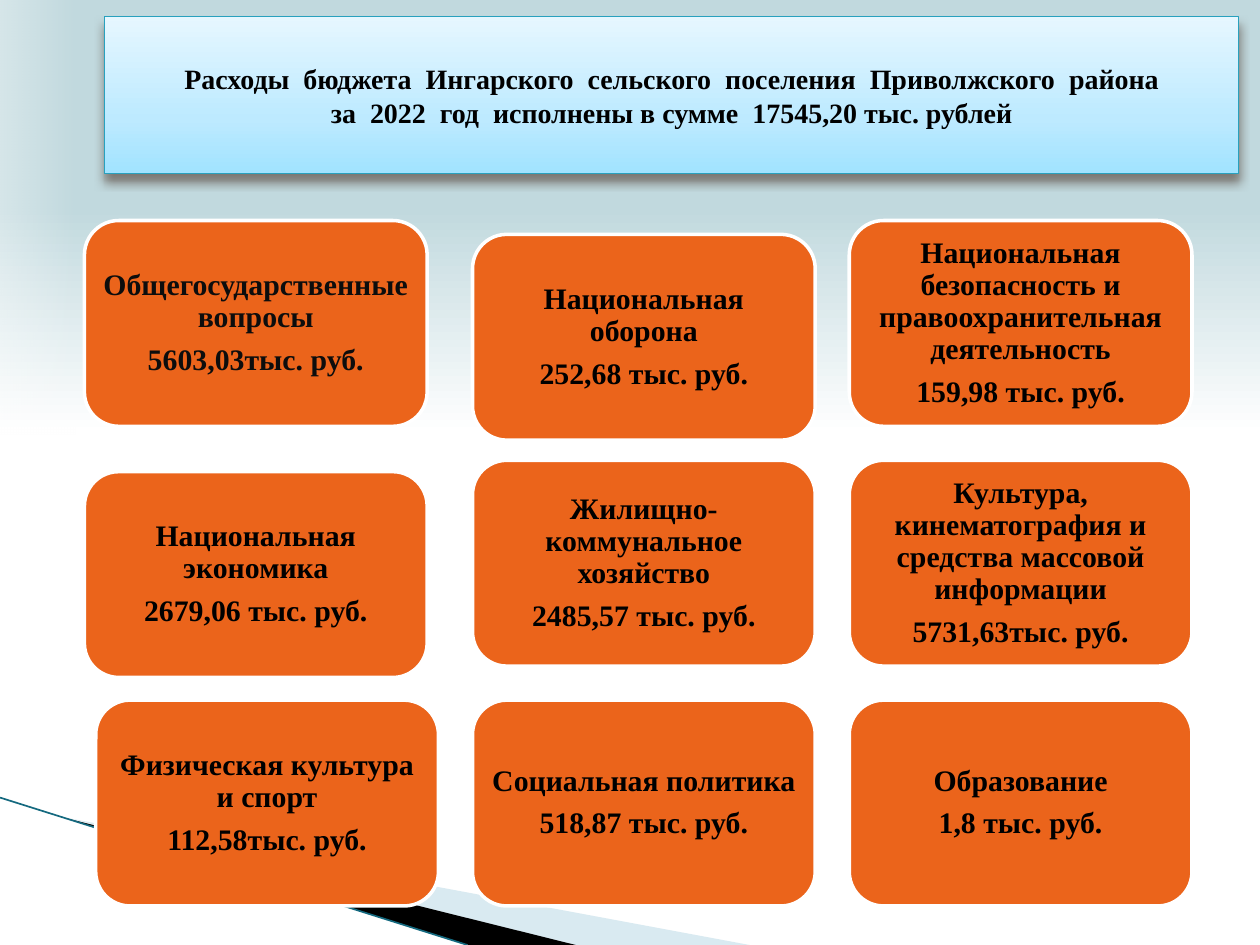
from dataclasses import dataclass

from lxml import etree
from pptx import Presentation
from pptx.dml.color import RGBColor
from pptx.enum.shapes import MSO_CONNECTOR, MSO_SHAPE
from pptx.enum.text import MSO_ANCHOR, PP_ALIGN
from pptx.oxml.ns import qn
from pptx.util import Inches, Pt

RECT = MSO_SHAPE.RECTANGLE
ALT = MSO_SHAPE.FLOWCHART_ALTERNATE_PROCESS
ROUND = MSO_SHAPE.ROUNDED_RECTANGLE
STRAIGHT = MSO_CONNECTOR.STRAIGHT
MIDDLE = MSO_ANCHOR.MIDDLE
CENTER = PP_ALIGN.CENTER


@dataclass(frozen=True)
class Theme:
    font: str = "Times New Roman"
    head: int = 16
    body: int = 17
    ink: str = "000000"
    soft: str = "0D0D0D"
    card: str = "EB641B"
    white: str = "FFFFFF"
    edge: str = "28A1BE"
    shade: str = "4E3B30"
    pale: str = "A0CBDC"
    teal: str = "14697F"
    sky: tuple = ((0, "C1D9DE"), (22, "C1D9DE"), (46, "FFFFFF"), (100, "FFFFFF"))
    glow: tuple = ((0, "FFFFFF", 35), (100, "FFFFFF", 0))
    ice: tuple = ((0, "E6F7FF"), (65, "BDEAFF"), (100, "A1E3FF"))


T = Theme()
WIDE, HIGH = 10, 7.5

# Words parted by "|" stand a double space apart.
TITLE = (
    "Расходы|бюджета|Ингарского|сельского|поселения|Приволжского|района",
    "за|2022|год|исполнены в сумме|17545,20 тыс. рублей",
)

# Name, sum, shift right, shift down, outline, text colour
CARDS = (
    ("Общегосударственные вопросы", "5603,03тыс. руб.", -0.09, 0, ALT, T.soft),
    ("Национальная оборона", "252,68 тыс. руб.", 0, 0.11, ALT, T.ink),
    ("Национальная безопасность и правоохранительная деятельность",
     "159,98 тыс. руб.", 0, 0, ALT, T.ink),
    ("Национальная экономика", "2679,06 тыс. руб.", -0.09, 0.09, ALT, T.ink),
    ("Жилищно-коммунальное хозяйство", "2485,57 тыс. руб.", 0, 0, ALT, T.ink),
    ("Культура, кинематография и средства массовой информации",
     "5731,63тыс. руб.", 0, 0, ALT, T.ink),
    ("Физическая культура и спорт", "112,58тыс. руб.", 0, 0, ROUND, T.ink),
    ("Социальная политика", "518,87 тыс. руб.", 0, 0, ALT, T.ink),
    ("Образование", "1,8 тыс. руб.", 0, 0, ALT, T.ink),
)


def rgb(code):
    return RGBColor.from_string(code)


def tint(parent, code, alpha=100):
    """Add a colour with an opacity in percent."""
    color = etree.SubElement(parent, qn("a:srgbClr"), val=code)
    if alpha < 100:
        etree.SubElement(color, qn("a:alpha"), val=str(alpha * 1000))


def blend(fill, root, stops, angle):
    """Give the fill inside root these gradient stops; 90 runs downwards."""
    fill.gradient()
    grad = root.find(".//" + qn("a:gradFill"))
    for child in list(grad):
        grad.remove(child)
    group = etree.SubElement(grad, qn("a:gsLst"))
    for place, *color in stops:
        stop = etree.SubElement(group, qn("a:gs"), pos=str(place * 1000))
        tint(stop, *color)
    etree.SubElement(grad, qn("a:lin"), ang=str(angle * 60000), scaled="0")


def shape(slide, kind, box):
    item = slide.shapes.add_shape(kind, *map(Inches, box))
    item.shadow.inherit = False
    item.line.fill.background()
    return item


def write(para, text, size, color):
    run = para.add_run()
    run.text = text
    font = run.font
    font.name, font.size, font.bold = T.font, Pt(size), True
    font.color.rgb = rgb(color)
    return run


def wedge(slide, points, color, alpha=100):
    spots = [(Inches(x), Inches(y)) for x, y in points]
    build = slide.shapes.build_freeform(*spots[0])
    build.add_line_segments(spots[1:])
    item = build.convert_to_shape()
    item.shadow.inherit = False
    item.line.fill.background()
    item.fill.solid()
    item.fill.fore_color.rgb = rgb(color)
    if alpha < 100:
        solid = item.element.spPr.find(qn("a:solidFill"))
        solid.remove(solid[0])
        tint(solid, color, alpha)


def backdrop(slide, wide, high):
    blend(slide.background.fill, slide.element, T.sky, 90)
    glow = shape(slide, RECT, (0, 0, wide * 0.06, high * 0.46))
    blend(glow.fill, glow.element.spPr, T.glow, 0)
    base, top = high, high * 0.866
    wedge(slide, ((0.55, top), (5.95, base), (4.56, base)), T.pale, 40)
    wedge(slide, ((0.53, top), (4.57, base), (3.72, base)), T.ink)
    line = slide.shapes.add_connector(
        STRAIGHT, 0, Inches(6.33), Inches(3.71), Inches(base))
    line.line.color.rgb = rgb(T.teal)
    line.line.width = Pt(0.95)
    etree.SubElement(line.element.spPr, qn("a:effectLst"))


def banner(slide, box):
    item = shape(slide, RECT, box)
    props = item.element.spPr
    blend(item.fill, props, T.ice, 90)
    item.line.color.rgb = rgb(T.edge)
    item.line.width = Pt(0.75)
    shade = etree.SubElement(
        props.find(qn("a:effectLst")), qn("a:outerShdw"),
        blurRad=str(Pt(6)), dist=str(Pt(4)), dir="5400000", rotWithShape="0")
    tint(shade, T.shade, 60)
    frame = item.text_frame
    frame.word_wrap, frame.vertical_anchor = True, MIDDLE
    para = frame.paragraphs[0]
    para.alignment = CENTER
    for row, text in enumerate(TITLE):
        if row:
            para.add_line_break()
        for spot, words in enumerate(text.split("|")):
            if spot:
                gap = write(para, " ", T.head, T.ink)
                gap.font._element.set("spc", "400")
            write(para, words, T.head, T.ink)


def card(slide, box, kind, lines, color):
    item = shape(slide, kind, box)
    item.fill.solid()
    item.fill.fore_color.rgb = rgb(T.card)
    item.line.color.rgb = rgb(T.white)
    item.line.width = Pt(2)
    frame = item.text_frame
    frame.word_wrap, frame.vertical_anchor = True, MIDDLE
    frame.margin_left = frame.margin_right = Inches(0.06)
    frame.margin_top = frame.margin_bottom = Inches(0.07)
    for row, text in enumerate(lines):
        para = frame.add_paragraph() if row else frame.paragraphs[0]
        para.alignment, para.line_spacing = CENTER, 0.9
        para.space_after = Pt(T.body * 0.35)
        write(para, text, T.body, color)


def grid(slide, box, cols=3, rows=3, gap=0.27):
    left, top, wide, high = box
    w = (wide - gap * (cols - 1)) / cols
    h = (high - gap * (rows - 1)) / rows
    for spot, (name, total, right, down, kind, color) in enumerate(CARDS):
        row, col = divmod(spot, cols)
        x = left + col * (w + gap) + right
        y = top + row * (h + gap) + down
        card(slide, (x, y, w, h), kind, (name, total), color)


def main():
    deck = Presentation()
    deck.slide_width, deck.slide_height = Inches(WIDE), Inches(HIGH)
    slide = deck.slides.add_slide(deck.slide_layouts[6])
    backdrop(slide, WIDE, HIGH)
    banner(slide, (0.83, 0.13, 9, 1.25))
    grid(slide, (0.76, 1.75, 8.7, 5.44))
    deck.save("out.pptx")


if __name__ == "__main__":
    main()
